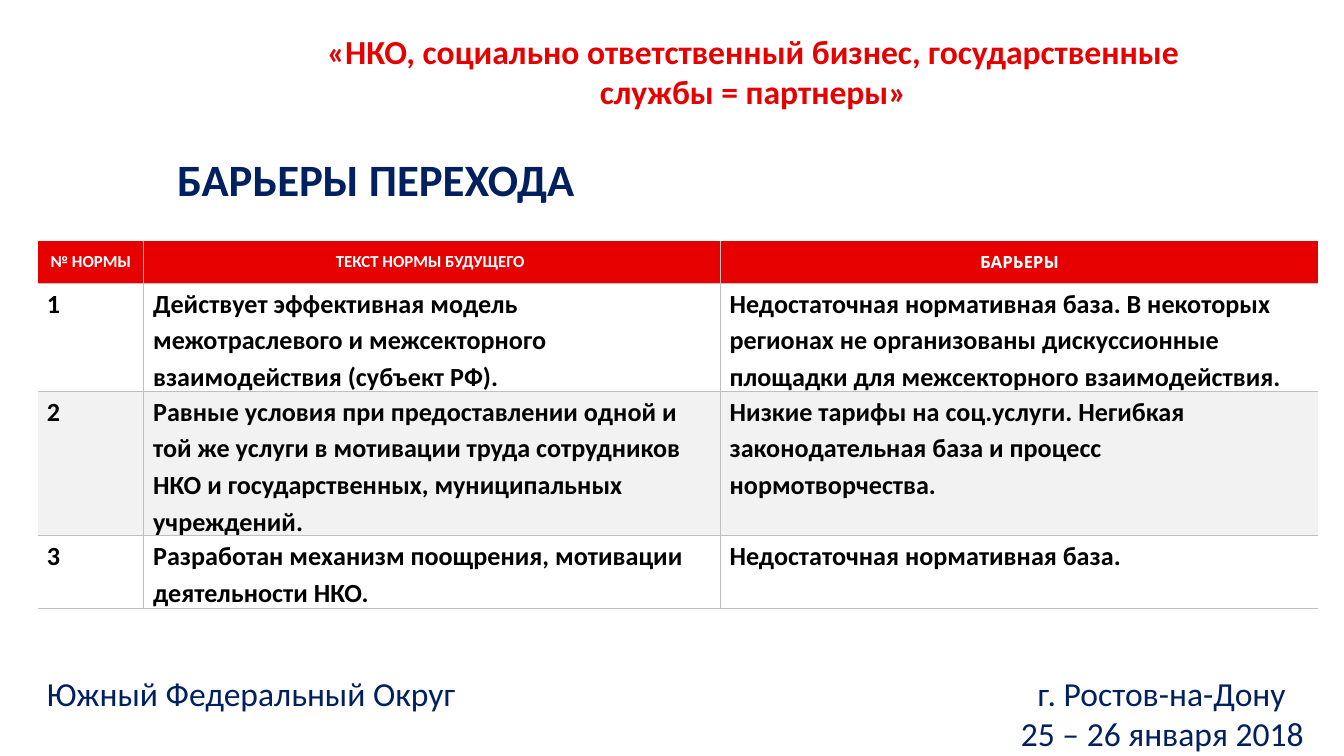
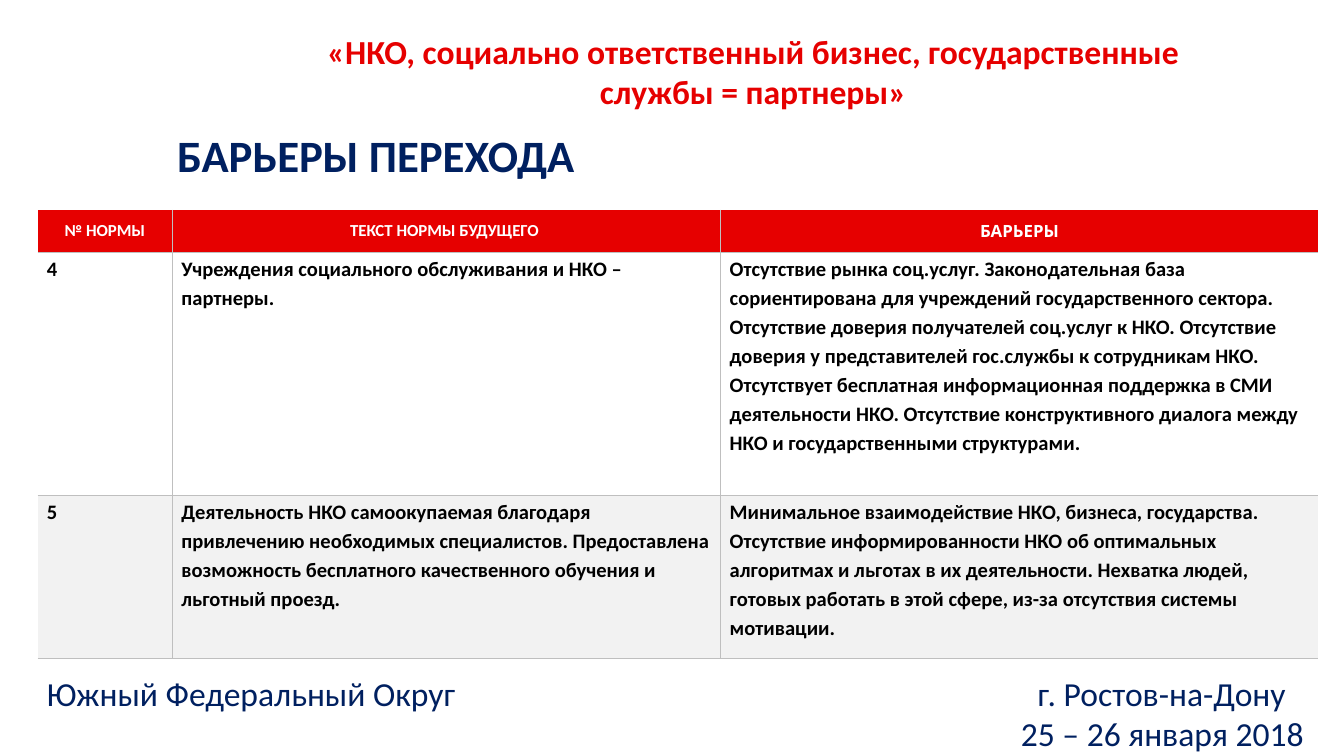
from lxml.etree import SubElement
from pptx import Presentation
from pptx.dml.color import RGBColor
from pptx.enum.text import MSO_ANCHOR, MSO_AUTO_SIZE, PP_ALIGN
from pptx.oxml.ns import qn
from pptx.util import Inches, Pt

NAVY, RED, WHITE, BLACK = "002060", "E60000", "FFFFFF", "000000"
BAND, RULE = "F2F2F2", "BFBFBF"

MOTTO = "«НКО, социально ответственный бизнес, государственные службы = партнеры»"
HEADING = "БАРЬЕРЫ ПЕРЕХОДА"
FOOTER = ["Южный Федеральный Округ\tг. Ростов-на-Дону", "25 – 26 января 2018"]
HEADER = ("№ НОРМЫ", "ТЕКСТ НОРМЫ БУДУЩЕГО ", "БАРЬЕРЫ")
HEADER_FONTS = ("Calibri", "Calibri", "Cabin")
PAGE_WIDTH = Inches(10)
PAGE_HEIGHT = PAGE_WIDTH * 9 // 16
TABLE_LEFT = 0.28
CITY_TAB = 7.37

SLIDES = [
    {
        "heading_top": 1.08, "table_top": 1.79, "size": 14,
        "columns": (0.79, 4.29, 4.45), "heights": (0.32, 0.6, 0.81, 0.4),
        "norms": [
            ("1", "Действует эффективная модель межотраслевого и межсекторного "
                  "взаимодействия (субъект РФ).",
             "Недостаточная нормативная база. В некоторых регионах не организованы "
             "дискуссионные площадки для межсекторного взаимодействия."),
            ("2", "Равные условия при предоставлении одной и той же услуги в мотивации "
                  "труда сотрудников НКО и государственных, муниципальных учреждений.",
             "Низкие тарифы на соц.услуги. Негибкая законодательная база и процесс "
             "нормотворчества."),
            ("3", "Разработан механизм поощрения, мотивации деятельности НКО.",
             "Недостаточная нормативная база."),
        ],
    },
    {
        "heading_top": 0.9, "table_top": 1.56, "size": 11,
        "columns": (1, 4.08, 4.45), "heights": (0.32, 1.81, 1.21),
        "norms": [
            ("4", "Учреждения социального обслуживания и НКО – партнеры.",
             "Отсутствие рынка соц.услуг. Законодательная база сориентирована для "
             "учреждений государственного сектора. Отсутствие доверия получателей "
             "соц.услуг к НКО. Отсутствие доверия у представителей гос.службы к "
             "сотрудникам НКО. Отсутствует бесплатная информационная поддержка в СМИ "
             "деятельности НКО. Отсутствие конструктивного диалога между НКО и "
             "государственными структурами."),
            ("5", "Деятельность НКО самоокупаемая благодаря привлечению необходимых "
                  "специалистов. Предоставлена возможность бесплатного качественного "
                  "обучения и льготный проезд.",
             "Минимальное взаимодействие НКО, бизнеса, государства. Отсутствие "
             "информированности НКО об оптимальных алгоритмах и льготах в их "
             "деятельности. Нехватка людей, готовых работать в этой сфере, из-за "
             "отсутствия системы мотивации."),
        ],
    },
]


def set_all(target, values):
    for name, value in values.items():
        setattr(target, name, value)


def color(value):
    return RGBColor.from_string(value)


def write(para, text, size, ink, bold=True, font="Calibri", **layout):
    set_all(para, layout)
    span = para.add_run()
    span.text = text
    set_all(span.font, {"size": Pt(size), "bold": bold, "name": font})
    span.font.color.rgb = color(ink)


def add_box(page, place, **frame_values):
    frame = page.shapes.add_textbox(*map(Inches, place)).text_frame
    set_all(frame, {"word_wrap": True, **frame_values})
    return frame


def add_heading(page, top):
    frame = add_box(page, (1.22, top, 3.19, 0.5), word_wrap=False,
                    auto_size=MSO_AUTO_SIZE.SHAPE_TO_FIT_TEXT)
    write(frame.paragraphs[0], HEADING, 24, NAVY)


def add_motto(page):
    frame = add_box(page, (2.03, 0.38, 7.15, 0.3), vertical_anchor=MSO_ANCHOR.MIDDLE)
    write(frame.paragraphs[0], MOTTO, 18, RED, alignment=PP_ALIGN.CENTER)


def add_footer(page):
    """Region and city share a line, parted by a tab stop; the date is below."""
    frame = add_box(page, (0.13, 5.08, 9.67, 0.45), margin_left=Inches(0.22),
                    vertical_anchor=MSO_ANCHOR.MIDDLE)
    places, date = frame.paragraphs[0], frame.add_paragraph()
    write(places, FOOTER[0], 18, NAVY, False, alignment=PP_ALIGN.LEFT)
    write(date, FOOTER[1], 18, NAVY, False, alignment=PP_ALIGN.RIGHT)
    tabs = SubElement(places._p.get_or_add_pPr(), qn("a:tabLst"))
    SubElement(tabs, qn("a:tab"), pos=str(Inches(CITY_TAB)), algn="l")


def set_borders(cell, edges):
    """Rule the edges marked true and clear the others."""
    properties = cell._tc.get_or_add_tcPr()
    for edge, ruled in edges.items():
        line = SubElement(properties, qn(f"a:ln{edge}"), w=str(Pt(0.5)))
        if ruled:
            fill = SubElement(line, qn("a:solidFill"))
            SubElement(fill, qn("a:srgbClr"), val=RULE)
        else:
            SubElement(line, qn("a:noFill"))


def add_norms(page, content):
    columns, heights = content["columns"], content["heights"]
    place = (TABLE_LEFT, content["table_top"], sum(columns), sum(heights))
    table = page.shapes.add_table(len(heights), len(columns),
                                  *map(Inches, place)).table
    for column, width in zip(table.columns, columns):
        column.width = Inches(width)
    for row, height in zip(table.rows, heights):
        row.height = Inches(height)

    for r, texts in enumerate([HEADER, *content["norms"]]):
        for c, text in enumerate(texts):
            cell = table.cell(r, c)
            is_header = r == 0
            inset = Inches(0.03 if is_header else 0)
            set_all(cell, {
                "margin_left": Inches(0.07), "margin_right": Inches(0.07),
                "margin_top": inset, "margin_bottom": inset,
                "vertical_anchor": MSO_ANCHOR.MIDDLE if is_header else MSO_ANCHOR.TOP,
            })
            set_borders(cell, {"L": c > 0, "R": c < len(columns) - 1,
                               "T": r > 0, "B": True})
            cell.fill.solid()
            cell.fill.fore_color.rgb = color(
                RED if is_header else WHITE if r % 2 else BAND)
            para = cell.text_frame.paragraphs[0]
            if is_header:
                write(para, text, 9, WHITE, font=HEADER_FONTS[c],
                      alignment=PP_ALIGN.CENTER)
            else:
                write(para, text, content["size"], BLACK, line_spacing=1.15)


def main():
    deck = Presentation()
    set_all(deck, {"slide_width": PAGE_WIDTH, "slide_height": PAGE_HEIGHT})
    for content in SLIDES:
        page = deck.slides.add_slide(deck.slide_layouts[6])
        add_heading(page, content["heading_top"])
        add_norms(page, content)
        add_footer(page)
        add_motto(page)
    deck.save("out.pptx")


if __name__ == "__main__":
    main()
